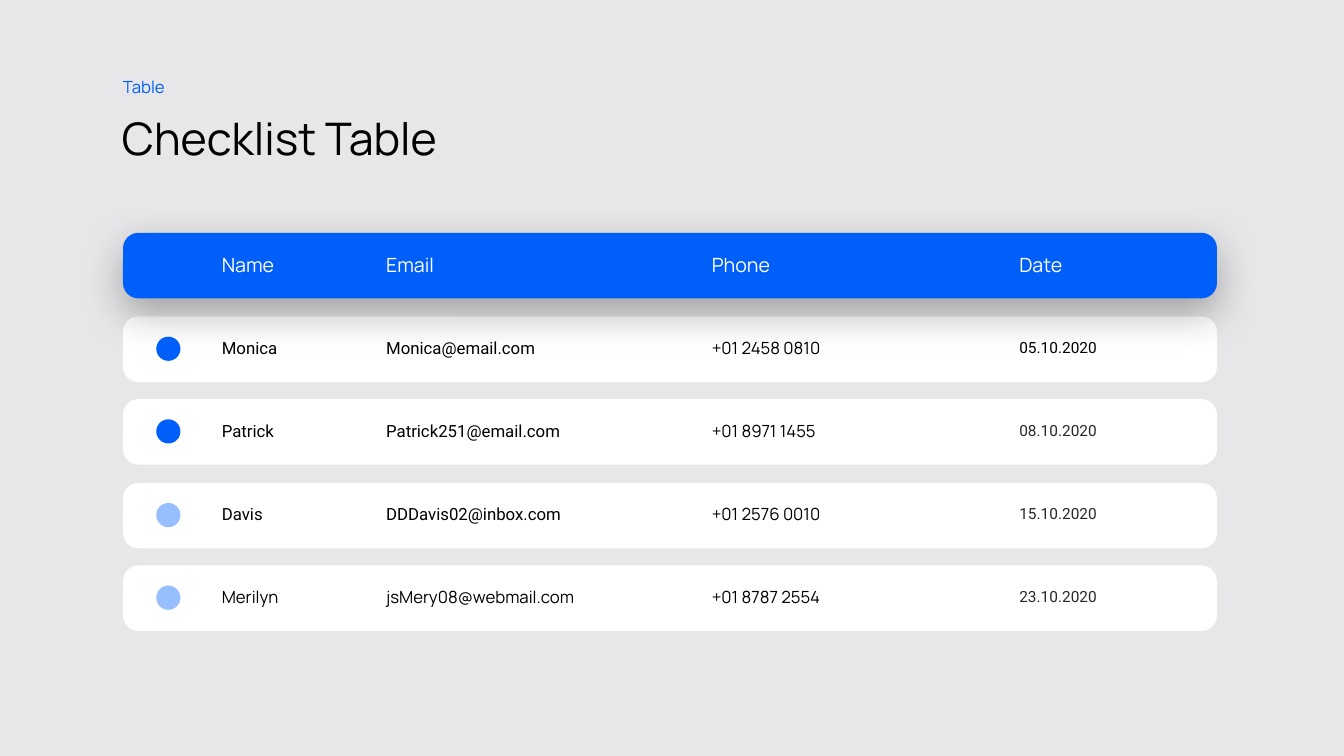
"""Build a checklist table slide with rounded rows and status dots."""
from lxml import etree
from pptx import Presentation
from pptx import util as u
from pptx.dml.color import RGBColor
from pptx.enum import shapes, text
from pptx.oxml import ns

PX = 9144
BLUE = RGBColor(0x00, 0x5F, 0xF9)
LIGHT_BLUE = RGBColor(0x97, 0xBE, 0xFF)
BLACK = RGBColor(0x00, 0x00, 0x00)
DARK_GREY = RGBColor(0x28, 0x28, 0x29)
WHITE = RGBColor(0xFF, 0xFF, 0xFF)
BACKGROUND = RGBColor(0xE7, 0xE7, 0xE9)
NO_STYLE = "{2D5ABB26-0587-4C30-8999-92F81FD0307C}"

LEFT, WIDTH = 122, 1085
ROW_TOP, ROW_HEIGHT = 231, 65
DOT_SIZE = 24
COLUMN_WIDTHS = (213, 323, 305, 214)
HEADERS = ("Name", "Email", "Phone", "Date")
CONTACTS = (
    ("Monica", "Monica@email.com", "+01 2458 0810", "05.10.2020"),
    ("Patrick", "Patrick251@email.com", "+01 8971 1455", "08.10.2020"),
    ("Davis", "DDDavis02@inbox.com", "+01 2576 0010", "15.10.2020"),
    ("Merilyn", "jsMery08@webmail.com", "+01 8787 2554", "23.10.2020"),
)
CONTACT_FONTS = ("Roboto", "Roboto", "Roboto", "Manrope")
DATE_COLORS = (BLACK, DARK_GREY, DARK_GREY, DARK_GREY)
DOT_COLORS = (BLUE, BLUE, LIGHT_BLUE, LIGHT_BLUE)


def px(*lengths):
    """Turn px lengths into EMU."""
    return [u.Emu(length * PX) for length in lengths]


def row_top(row):
    """Give the top of a row, spaced 82.5 px apart and rounded up."""
    return ROW_TOP + (row * 165 + 1) // 2


def set_all(target, values):
    """Set attributes from a dict of format values."""
    for name, value in values.items():
        setattr(target, name, value)


def set_margins(target, left, top):
    """Set the insets of a text frame or cell."""
    names = ("margin_left", "margin_top", "margin_right", "margin_bottom")
    set_all(target, dict(zip(names, px(left, top, 10, 5))))


def write(paragraph, wording, size, color, font="Manrope"):
    """Write one formatted run into a paragraph."""
    run = paragraph.add_run()
    run.text = wording
    set_all(run.font, {"size": u.Pt(size), "name": font, "bold": False})
    run.font.color.rgb = color


def add_filled(slide, kind, box, color):
    """Add a plain filled shape without a line."""
    shape = slide.shapes.add_shape(kind, *px(*box))
    shape.shadow.inherit = False
    shape.fill.solid()
    shape.fill.fore_color.rgb = color
    shape.line.fill.background()
    return shape


def add_bar(slide, row, color):
    """Add the rounded bar behind one table row."""
    box = (LEFT, row_top(row), WIDTH, ROW_HEIGHT)
    bar = add_filled(slide, shapes.MSO_SHAPE.ROUNDED_RECTANGLE, box, color)
    bar.adjustments[0] = 0.235
    return bar


def add_dot(slide, row, color):
    """Add the status dot of one table row."""
    top = row_top(row) + (ROW_HEIGHT - DOT_SIZE) // 2
    box = (155, top, DOT_SIZE, DOT_SIZE)
    add_filled(slide, shapes.MSO_SHAPE.OVAL, box, color)


def add_soft_shadow(shape):
    """Give a shape a soft shadow that falls downwards."""
    effects = shape._element.spPr.find(ns.qn("a:effectLst"))
    shadow = etree.SubElement(
        effects, ns.qn("a:outerShdw"), blurRad=str(u.Pt(30)),
        dist=str(u.Pt(10)), dir="5400000", algn="t", rotWithShape="0")
    color = etree.SubElement(shadow, ns.qn("a:srgbClr"), val=str(BLACK))
    etree.SubElement(color, ns.qn("a:alpha"), val="30000")


def add_label(slide):
    """Add the small label above the title."""
    frame = slide.shapes.add_textbox(*px(LEFT, 67, 57, 33)).text_frame
    set_margins(frame, 0, 5)
    set_all(frame, {"word_wrap": False,
                    "auto_size": text.MSO_AUTO_SIZE.SHAPE_TO_FIT_TEXT})
    paragraph = frame.paragraphs[0]
    set_all(paragraph, {"line_spacing": 1.2, "space_before": u.Pt(10)})
    write(paragraph, "Table", 12, BLUE)


def format_title(slide):
    """Place and format the title placeholder."""
    title = slide.shapes.title
    box = px(LEFT - 1, 100, WIDTH, 75)
    set_all(title, dict(zip(("left", "top", "width", "height"), box)))
    frame = title.text_frame
    set_margins(frame, 0, 10)
    set_all(frame, {"word_wrap": True, "auto_size": text.MSO_AUTO_SIZE.NONE,
                    "vertical_anchor": text.MSO_ANCHOR.MIDDLE})
    paragraph = frame.paragraphs[0]
    set_all(paragraph, {"alignment": text.PP_ALIGN.LEFT, "line_spacing": 0.9})
    write(paragraph, "Checklist Table", 32, BLACK)


def cell_formats():
    """Give size, colour and font for every cell, row by row."""
    yield [(14, WHITE, "Manrope")] * len(HEADERS)
    for font, date_color in zip(CONTACT_FONTS, DATE_COLORS):
        yield [(12, BLACK, font), (12, BLACK, font),
               (12, BLACK, "Manrope"), (11, date_color, "Roboto")]


def add_contact_table(slide):
    """Add the clear table that lies over the bars."""
    rows = (HEADERS, *CONTACTS)
    frame = slide.shapes.add_table(
        len(rows), len(HEADERS), *px(170, 222, sum(COLUMN_WIDTHS), 412))
    table = frame.table
    set_all(table, {"first_row": False, "horz_banding": False})
    table._tbl.tblPr.find(ns.qn("a:tableStyleId")).text = NO_STYLE
    for column, width in zip(table.columns, px(*COLUMN_WIDTHS)):
        column.width = width
    for row, wordings, formats in zip(table.rows, rows, cell_formats()):
        for index, cell in enumerate(row.cells):
            cell.fill.background()
            cell.vertical_anchor = text.MSO_ANCHOR.MIDDLE
            set_margins(cell, 0 if index else 50, 5)
            paragraph = cell.text_frame.paragraphs[0]
            write(paragraph, wordings[index], *formats[index])


def main():
    """Build and save the slide."""
    presentation = Presentation()
    set_all(presentation, dict(zip(("slide_width", "slide_height"),
                                   px(1333, 750))))
    slide = presentation.slides.add_slide(presentation.slide_layouts[5])
    slide.background.fill.solid()
    slide.background.fill.fore_color.rgb = BACKGROUND
    format_title(slide)
    add_label(slide)
    for row in range(1, len(CONTACTS) + 1):
        add_bar(slide, row, WHITE)
    add_soft_shadow(add_bar(slide, 0, BLUE))
    add_contact_table(slide)
    for row, color in enumerate(DOT_COLORS, start=1):
        add_dot(slide, row, color)
    presentation.save("out.pptx")


if __name__ == "__main__":
    main()
